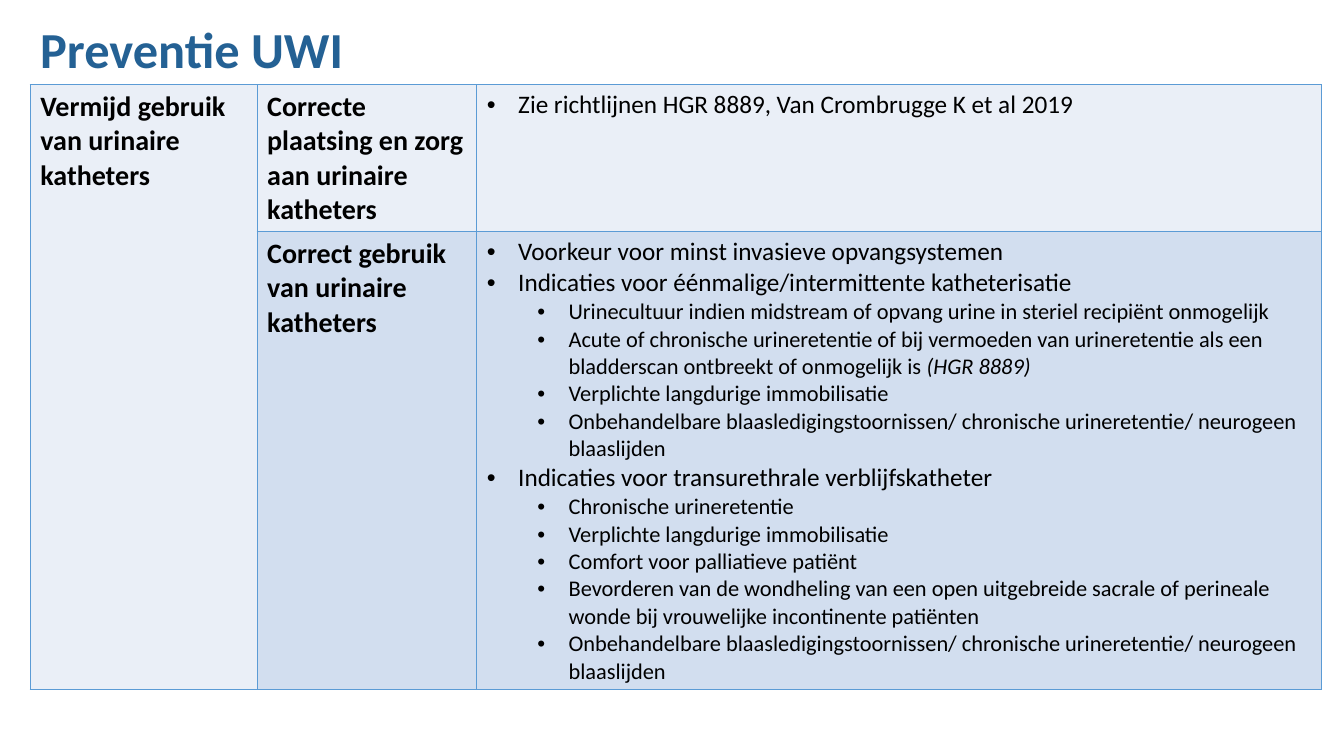
from lxml.etree import SubElement
from pptx import Presentation
from pptx.dml.color import RGBColor
from pptx.enum.text import MSO_ANCHOR
from pptx.oxml import parse_xml
from pptx.oxml.ns import nsdecls, qn
from pptx.util import Inches, Pt

TITLE_BLUE = RGBColor(0x24, 0x61, 0x94)
BORDER_BLUE = RGBColor(0x5B, 0x9B, 0xD5)
LIGHT_BAND = RGBColor(0xEA, 0xEF, 0xF7)
DARK_BAND = RGBColor(0xD2, 0xDE, 0xEF)
BLACK = RGBColor(0, 0, 0)

COLUMN_WIDTHS = (2.25, 2.18, 8.38)
ROW_HEIGHTS = (1.46, 4.54)
BLADDER_DISORDERS = "Onbehandelbare blaasledigingstoornissen/ chronische urineretentie/ neurogeen blaaslijden"
IMMOBILISATION = "Verplichte langdurige immobilisatie"
AVOID = "Vermijd gebruik van urinaire katheters"
MEASURES = [
    ("Correcte plaatsing en zorg aan urinaire katheters", LIGHT_BAND, [
        ("Zie richtlijnen HGR 8889, Van Crombrugge K et al 2019", []),
    ]),
    ("Correct gebruik van urinaire katheters", DARK_BAND, [
        ("Voorkeur voor minst invasieve opvangsystemen", []),
        ("Indicaties voor éénmalige/intermittente katheterisatie", [
            ("Urinecultuur indien midstream of opvang urine in steriel recipiënt onmogelijk", ""),
            ("Acute of chronische urineretentie of bij vermoeden van urineretentie als een "
             "bladderscan ontbreekt of onmogelijk is ", "(HGR 8889)"),
            (IMMOBILISATION, ""),
            (BLADDER_DISORDERS, ""),
        ]),
        ("Indicaties voor transurethrale verblijfskatheter", [
            ("Chronische urineretentie", ""),
            (IMMOBILISATION, ""),
            ("Comfort voor palliatieve patiënt", ""),
            ("Bevorderen van de wondheling van een open uitgebreide sacrale of perineale "
             "wonde bij vrouwelijke incontinente patiënten", ""),
            (BLADDER_DISORDERS, ""),
        ]),
    ]),
]


def add_span(para, text, size=20, bold=False, italic=False, color=BLACK):
    """Add formatted text to a paragraph."""
    span = para.add_run()
    span.text = text
    font = span.font
    font.name, font.size, font.bold, font.italic = "Calibri", Pt(size), bold, italic
    font.color.rgb = color


def set_bullet(para, level):
    """Give a paragraph a hanging bullet at the given level."""
    para.level = level
    properties = para._p.get_or_add_pPr()
    properties.set("marL", str(Inches(0.31 + 0.5 * level)))
    properties.set("indent", str(Inches(-0.31)))
    SubElement(properties, qn("a:buFont")).set("typeface", "Arial")
    SubElement(properties, qn("a:buChar")).set("char", "•")


def style_cell(cell, color):
    """Fill a cell and draw its four borders."""
    cell.fill.solid()
    cell.fill.fore_color.rgb = color
    properties = cell._tc.get_or_add_tcPr()
    for position, side in enumerate(("lnL", "lnR", "lnT", "lnB")):
        properties.insert(position, parse_xml(
            f'<a:{side} {nsdecls("a")} w="{Pt(1)}"><a:solidFill>'
            f'<a:srgbClr val="{BORDER_BLUE}"/></a:solidFill></a:{side}>'))


def fill_bullets(cell, topics):
    """Write topics and their indented details in a cell."""
    lines = []
    for topic, details in topics:
        lines.append((topic, "", 0))
        lines.extend((text, source, 1) for text, source in details)
    frame = cell.text_frame
    for number, (text, source, level) in enumerate(lines):
        para = frame.add_paragraph() if number else frame.paragraphs[0]
        set_bullet(para, level)
        size = 18 - 2 * level
        add_span(para, text, size=size)
        if source:
            add_span(para, source, size=size, italic=True)


def add_title(page, left, top, width, height):
    """Place the slide title in the given box."""
    box = page.shapes.add_textbox(Inches(left), Inches(top), Inches(width), Inches(height))
    frame = box.text_frame
    frame.word_wrap = True
    frame.vertical_anchor = MSO_ANCHOR.BOTTOM
    para = frame.paragraphs[0]
    para.line_spacing = 0.9
    add_span(para, "Preventie UWI", size=36, bold=True, color=TITLE_BLUE)


def add_measures(page, left, top):
    """Place the table of preventive measures at the given corner."""
    table = page.shapes.add_table(
        len(MEASURES), len(COLUMN_WIDTHS), Inches(left), Inches(top),
        Inches(sum(COLUMN_WIDTHS)), Inches(sum(ROW_HEIGHTS))).table
    table.first_row = table.horz_banding = False
    for column, width in zip(table.columns, COLUMN_WIDTHS):
        column.width = Inches(width)
    for row, height in zip(table.rows, ROW_HEIGHTS):
        row.height = Inches(height)
    for row, (heading, color, topics) in zip(table.rows, MEASURES):
        avoid_cell, heading_cell, topics_cell = row.cells
        style_cell(avoid_cell, LIGHT_BAND)
        style_cell(heading_cell, color)
        style_cell(topics_cell, color)
        add_span(heading_cell.text_frame.paragraphs[0], heading, bold=True)
        fill_bullets(topics_cell, topics)
    first = table.cell(0, 0)
    first.merge(table.cell(len(MEASURES) - 1, 0))
    add_span(first.text_frame.paragraphs[0], AVOID, bold=True)


def main():
    """Build and save the slide."""
    deck = Presentation()
    deck.slide_width, deck.slide_height = Inches(13.33), Inches(7.5)
    page = deck.slides.add_slide(deck.slide_layouts[6])
    add_title(page, 0.3, 0.18, 12.18, 0.66)
    add_measures(page, 0.3, 0.84)
    deck.save("out.pptx")


if __name__ == "__main__":
    main()
